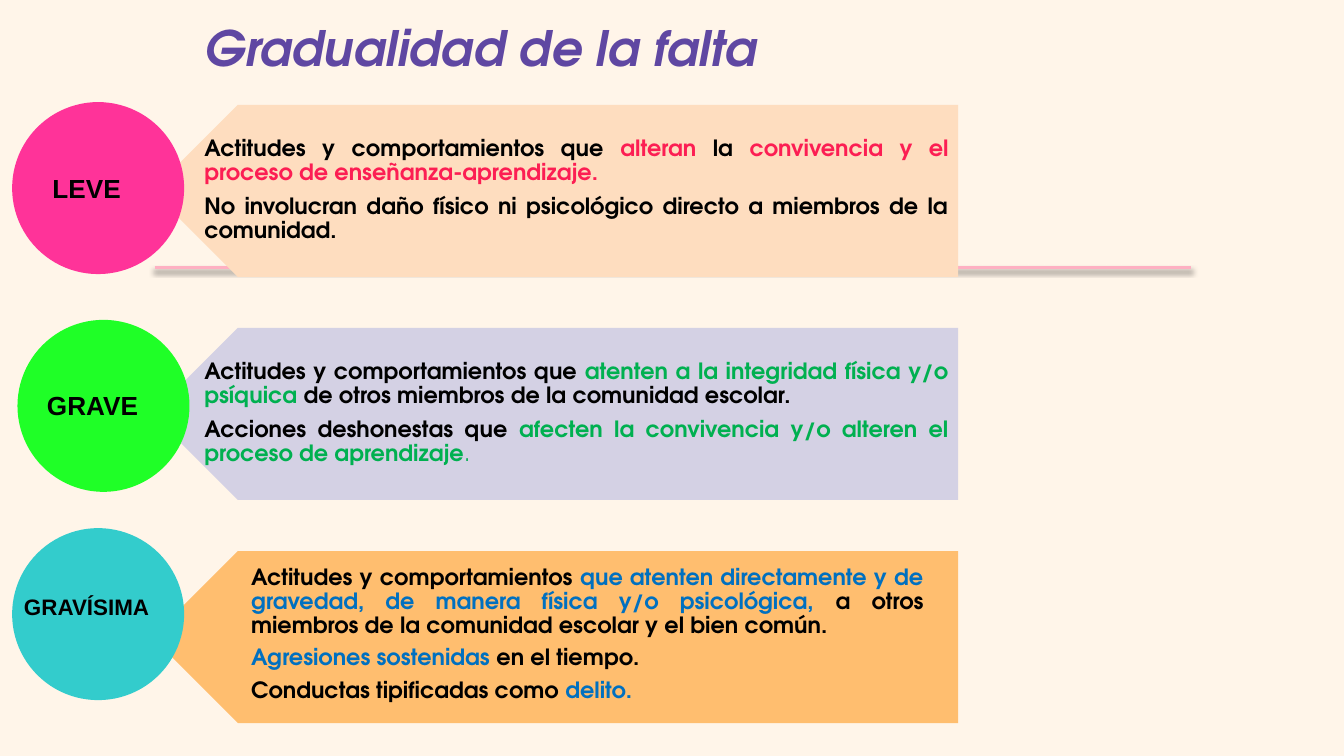
from lxml.etree import SubElement
from pptx import Presentation
from pptx.dml.color import RGBColor
from pptx.enum.shapes import MSO_CONNECTOR, MSO_SHAPE
from pptx.enum.text import MSO_ANCHOR as Anchor, PP_ALIGN as Align
from pptx.oxml.ns import qn
from pptx.util import Inches, Pt

BODY_FONT = "TeX Gyre Adventor"
LABEL_FONT = "Arial"
BLACK, RED, GREEN, BLUE = "000000", "FC1E53", "00B050", "0070C0"
PINK = "FF3399"


def color(hex_string):
    return RGBColor.from_string(hex_string)


def box(left, top, width, height):
    return [Inches(value) for value in (left, top, width, height)]


def write(frame, paragraphs, *, font, size, align=Align.LEFT, anchor=Anchor.TOP,
          insets=(0.04, 0.04), spacing=None, before=0, italic=False):
    """Fill a frame; each paragraph is a list of (text, colour[, bold]) runs."""
    frame.word_wrap = True
    frame.vertical_anchor = anchor
    frame.margin_left = frame.margin_right = Inches(insets[0])
    frame.margin_top = frame.margin_bottom = Inches(insets[1])
    for index, runs in enumerate(paragraphs):
        paragraph = frame.add_paragraph() if index else frame.paragraphs[0]
        paragraph.alignment = align
        paragraph.line_spacing = spacing
        paragraph.space_before = Pt(before)
        for text, hex_string, *bold in runs:
            run = paragraph.add_run()
            run.text = text
            run.font.name, run.font.size = font, Pt(size)
            run.font.bold = bold[0] if bold else True
            run.font.italic = italic
            run.font.color.rgb = color(hex_string)


class SlideBuilder:
    def __init__(self, presentation, background):
        self.slide = presentation.slides.add_slide(presentation.slide_layouts[5])
        self.shapes = self.slide.shapes
        self.slide.background.fill.solid()
        self.slide.background.fill.fore_color.rgb = color(background)

    def title(self, text, place, hex_string):
        title = self.shapes.title
        title.left, title.top, title.width, title.height = box(*place)
        write(title.text_frame, [[(text, hex_string)]], font=BODY_FONT, size=26.1,
              insets=(0.1, 0.1), italic=True)

    def paint(self, shape, fill):
        shape.shadow.inherit = False
        shape.fill.solid()
        shape.fill.fore_color.rgb = color(fill)
        shape.line.fill.background()
        return shape

    def shape(self, kind, place, fill):
        return self.paint(self.shapes.add_shape(kind, *box(*place)), fill)

    def arrow_panel(self, top, fill):
        left, shoulder, right, height = 1.13, 1.77, 7.13, 1.28
        bottom = top + height
        builder = self.shapes.build_freeform(Inches(right), Inches(bottom))
        corners = [(shoulder, bottom), (left, top + height / 2),
                   (shoulder, top), (right, top)]
        builder.add_line_segments([(Inches(x), Inches(y)) for x, y in corners])
        self.paint(builder.convert_to_shape(), fill)

    def text(self, place, paragraphs, **style):
        text_box = self.shapes.add_textbox(*box(*place))
        write(text_box.text_frame, paragraphs, **style)

    def label(self, text, place, size, align, fill=None):
        """Add a bold label, on a filled rectangle when a fill is given."""
        runs = [[(text, BLACK)]]
        style = dict(font=LABEL_FONT, size=size, align=align)
        if fill:
            rectangle = self.shape(MSO_SHAPE.RECTANGLE, place, fill)
            write(rectangle.text_frame, runs, **style)
        else:
            self.text(place, runs, **style)

    def shadowed_line(self, left, right, y, hex_string):
        line = self.shapes.add_connector(
            MSO_CONNECTOR.STRAIGHT, Inches(left), Inches(y), Inches(right), Inches(y))
        line.line.color.rgb = color(hex_string)
        line.line.width = Pt(2)
        effects = SubElement(line._element.spPr, qn("a:effectLst"))
        shadow = SubElement(effects, qn("a:outerShdw"), blurRad=str(Pt(3.1)),
                            dist=str(Pt(1.6)), dir="5400000", rotWithShape="0")
        shadow_color = SubElement(shadow, qn("a:srgbClr"), val=BLACK)
        SubElement(shadow_color, qn("a:alpha"), val="38000")


MILD = [
    [("Actitudes y comportamientos que ", BLACK), ("alteran", RED), (" la ", BLACK),
     ("convivencia y el proceso de enseñanza-aprendizaje. ", RED)],
    [("No involucran daño físico ni psicológico directo a miembros de la comunidad.",
      BLACK)],
]
SERIOUS = [
    [("Actitudes y comportamientos que ", BLACK),
     ("atenten a la integridad física y/o psíquica", GREEN),
     (" de otros miembros de la comunidad escolar.", BLACK)],
    [("Acciones deshonestas que ", BLACK),
     ("afecten la convivencia y/o alteren el proceso de aprendizaje", GREEN),
     (".", GREEN, False)],
]
VERY_SERIOUS = [
    [("Actitudes y comportamientos ", BLACK),
     ("que atenten directamente y de gravedad, de manera física y/o psicológica,", BLUE),
     (" a otros miembros de la comunidad escolar y el bien común.", BLACK)],
    [("Agresiones sostenidas ", BLUE), ("en el tiempo.", BLACK)],
    [("Conductas tipificadas como ", BLACK), ("delito.", BLUE)],
]
PANEL_STYLE = dict(anchor=Anchor.MIDDLE, insets=(0.07, 0.07), before=5.2)
LOOSE_STYLE = dict(insets=(0.1, 0.05), before=4.5)

# panel fill, circle left and top, circle fill, text place, paragraphs, text style
LEVELS = [
    ("FEDDBF", 0.09, 0.76, PINK, (1.45, 0.94, 5.68, 0.95), MILD, PANEL_STYLE),
    ("D4D1E4", 0.13, 2.38, "1FFF27", (1.45, 2.6, 5.68, 0.95), SERIOUS, PANEL_STYLE),
    ("FFBE6F", 0.09, 3.93, "33CCCC", (1.77, 4.16, 5.2, 1.15), VERY_SERIOUS, LOOSE_STYLE),
]
LABELS = [
    ("LEVE", (0.2, 1.24, 0.89, 0.31), 14, Align.CENTER, PINK),
    ("GRAVE", (0.31, 2.86, 0.84, 0.31), 14, Align.LEFT),
    ("GRAVÍSIMA", (0.06, 4.37, 1.17, 0.28), 12, Align.CENTER),
]


def main():
    presentation = Presentation()
    presentation.slide_width = Inches(10)
    presentation.slide_height = presentation.slide_width * 9 // 16
    builder = SlideBuilder(presentation, "FFF5E9")
    builder.title("Gradualidad de la falta", (1.42, 0.03, 4.83, 0.67), "5F47A2")
    builder.shadowed_line(1.15, 8.86, 1.99, "FEB0C2")

    for index, level in enumerate(LEVELS):
        panel_fill, left, top, circle_fill, place, paragraphs, style = level
        builder.arrow_panel(0.78 + 1.66 * index, panel_fill)
        builder.text(place, paragraphs, font=BODY_FONT, size=12,
                     align=Align.JUSTIFY, spacing=0.9, **style)
        builder.shape(MSO_SHAPE.OVAL, (left, top, 1.28, 1.28), circle_fill)

    for label in LABELS:
        builder.label(*label)

    presentation.save("out.pptx")


if __name__ == "__main__":
    main()
